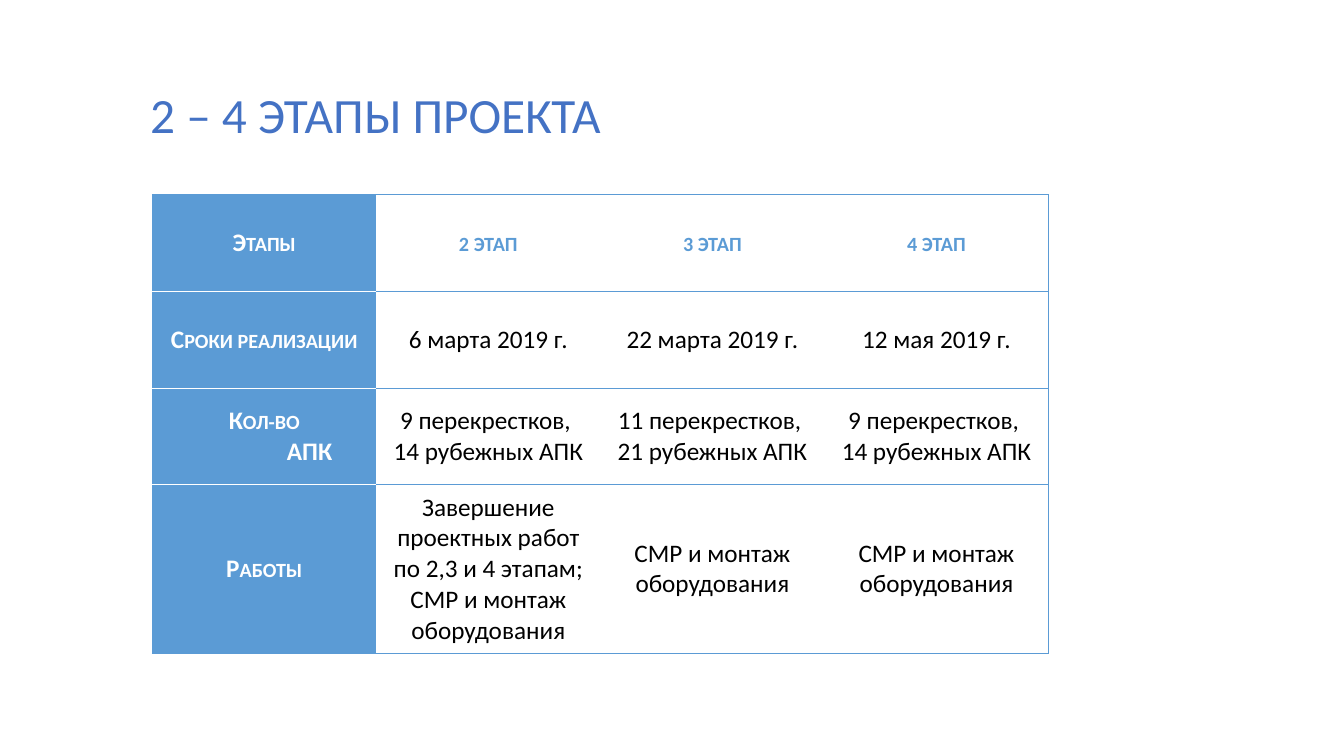
from lxml import etree
from pptx import Presentation
from pptx.dml.color import RGBColor
from pptx.enum import text
from pptx.oxml import ns
from pptx.util import Inches, Pt

COLORS = {"title": "4472C4", "blue": "5B9BD5", "white": "FFFFFF", "black": "000000"}
FONT = "Calibri"
ROW_HEIGHTS = [0.96, 0.96, 0.96, 1.67]
STAGES = [
    ["Этапы", "2 этап", "3 этап", "4 этап"],
    ["Сроки реализации", "6 марта 2019 г.", "22 марта 2019 г.", "12 мая 2019 г."],
    ["Кол-во\nАПК", "9 перекрестков, \n14 рубежных АПК",
     "11 перекрестков, \n21 рубежных АПК", "9 перекрестков, \n14 рубежных АПК"],
    ["Работы",
     "Завершение проектных работ по 2,3 и 4 этапам;\nСМР и монтаж оборудования",
     "СМР и монтаж оборудования", "СМР и монтаж оборудования"],
]


def rgb(name):
    return RGBColor.from_string(COLORS[name])


def format_runs(paragraph, size, color, bold=False, small_caps=False):
    for run in paragraph.runs:
        run.font.name = FONT
        run.font.size = Pt(size)
        run.font.bold = bold
        run.font.color.rgb = rgb(color)
        if small_caps:
            run._r.get_or_add_rPr().set("cap", "small")


def add_title(slide, wording):
    title = slide.shapes.title
    title.left, title.top = Inches(1.39), Inches(0.4)
    title.width, title.height = Inches(11.03), Inches(1.45)
    title.text_frame.text = wording
    title.text_frame.vertical_anchor = text.MSO_ANCHOR.MIDDLE
    paragraph = title.text_frame.paragraphs[0]
    paragraph.alignment = text.PP_ALIGN.LEFT
    paragraph.line_spacing = 0.9
    format_runs(paragraph, 44, "title", small_caps=True)


def set_border(cell, side, color):
    properties = cell._tc.get_or_add_tcPr()
    line = etree.SubElement(properties, ns.qn(f"a:ln{side}"), w=str(Pt(0.5)))
    if color is None:
        etree.SubElement(line, ns.qn("a:noFill"))
    else:
        fill = etree.SubElement(line, ns.qn("a:solidFill"))
        etree.SubElement(fill, ns.qn("a:srgbClr"), val=COLORS[color])


def format_cell(cell, row, column, last_row, last_column):
    is_label = column == 0
    is_heading = is_label or row == 0

    # Blue frame and row rules; white rules between the labels
    rule = "white" if is_label else "blue"
    set_border(cell, "L", "blue" if is_label else None)
    set_border(cell, "R", "blue" if column == last_column else None)
    set_border(cell, "T", "blue" if row == 0 else rule)
    set_border(cell, "B", "blue" if row == last_row else rule)
    cell.fill.solid()
    cell.fill.fore_color.rgb = rgb("blue" if is_label else "white")

    # Text
    cell.vertical_anchor = text.MSO_ANCHOR.MIDDLE
    color = "white" if is_label else "blue" if is_heading else "black"
    for index, paragraph in enumerate(cell.text_frame.paragraphs):
        paragraph.alignment = text.PP_ALIGN.CENTER
        if is_label and index > 0:
            paragraph._p.get_or_add_pPr().set("marL", str(Inches(0.45)))
        format_runs(paragraph, 18, color, bold=is_heading, small_caps=is_heading)


def add_stage_table(slide, rows):
    last_row, last_column = len(rows) - 1, len(rows[0]) - 1
    frame = slide.shapes.add_table(
        len(rows), len(rows[0]), Inches(1.51), Inches(1.93),
        Inches(8.89), Inches(sum(ROW_HEIGHTS)))
    table = frame.table
    table.first_row = table.horz_banding = False
    for row, values in enumerate(rows):
        table.rows[row].height = Inches(ROW_HEIGHTS[row])
        for column, value in enumerate(values):
            cell = table.cell(row, column)
            cell.text_frame.text = value
            format_cell(cell, row, column, last_row, last_column)


def main():
    presentation = Presentation()
    presentation.slide_width, presentation.slide_height = Inches(13.33), Inches(7.5)
    slide = presentation.slides.add_slide(presentation.slide_layouts[5])
    add_title(slide, "2 – 4 этапы проекта")
    add_stage_table(slide, STAGES)
    presentation.save("out.pptx")


if __name__ == "__main__":
    main()
